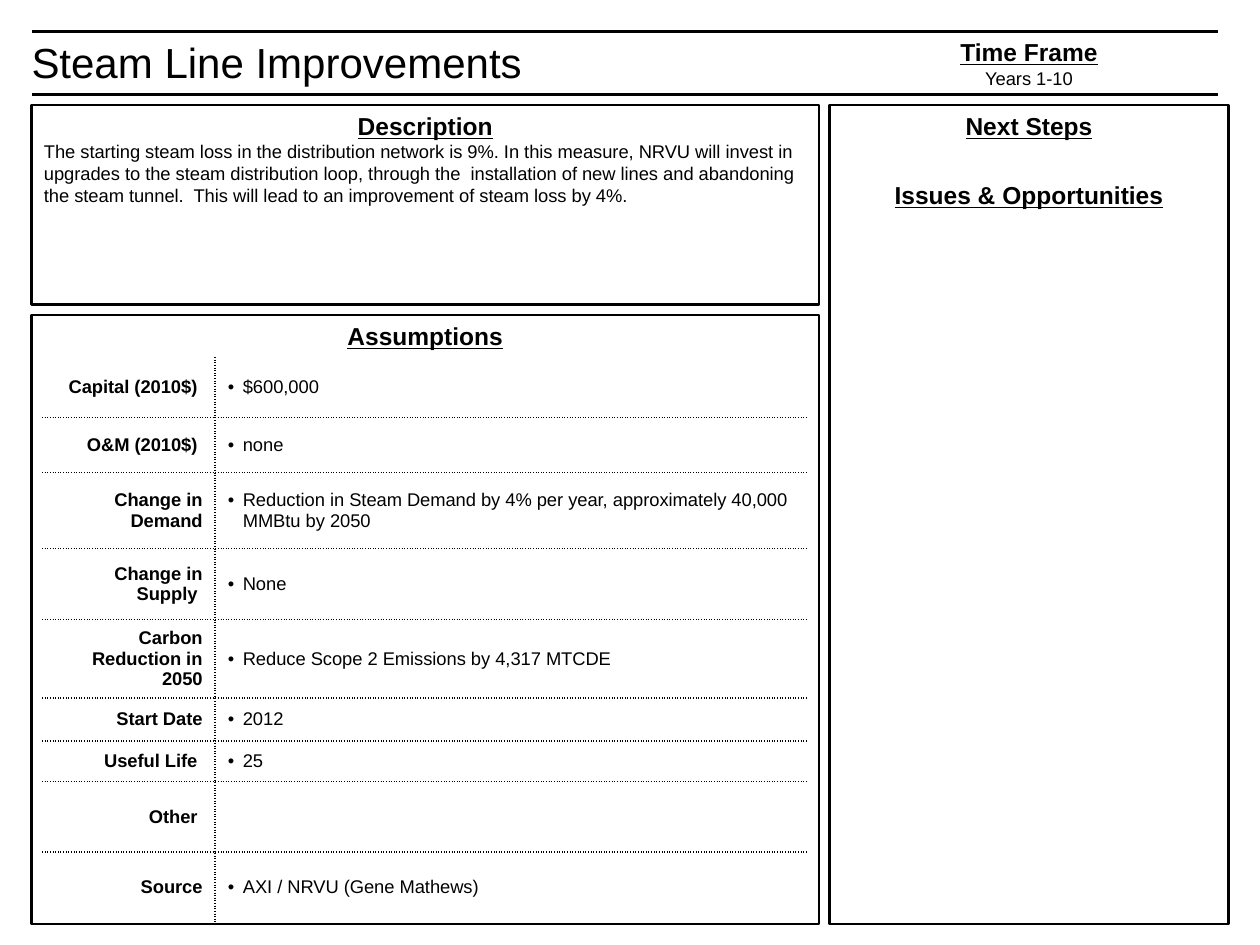
from lxml import etree
from pptx import Presentation
from pptx.dml.color import RGBColor
from pptx.enum.dml import MSO_LINE
from pptx.enum.shapes import MSO_CONNECTOR, MSO_SHAPE
from pptx.enum.text import MSO_ANCHOR, MSO_AUTO_SIZE, PP_ALIGN
from pptx.oxml.ns import qn
from pptx.util import Pt

TITLE_ONLY = 5
LEFT, CENTER, RIGHT = PP_ALIGN.LEFT, PP_ALIGN.CENTER, PP_ALIGN.RIGHT
TOP, MIDDLE = MSO_ANCHOR.TOP, MSO_ANCHOR.MIDDLE
RECTANGLE = MSO_SHAPE.RECTANGLE
STRAIGHT = MSO_CONNECTOR.STRAIGHT
NO_AUTOFIT = MSO_AUTO_SIZE.NONE
SOLID = MSO_LINE.SOLID
COLORS = {"ink": "000000"}
FONT = "Arial"
BODY_SIZE = 10.5
HEADING = {"size": 14, "bold": True, "underline": True, "align": CENTER}

DESCRIPTION = (
    "The starting steam loss in the distribution network is 9%. In this measure, "
    "NRVU will invest in upgrades to the steam distribution loop, through the  "
    "installation of new lines and abandoning the steam tunnel.  This will lead to "
    "an improvement of steam loss by 4%."
)
COLUMN_WIDTHS = (99, 339)
ASSUMPTIONS = (
    ("Capital (2010$) ", "$600,000", 34.5),
    ("O&M (2010$) ", "none", 31.5),
    ("Change in Demand", "Reduction in Steam Demand by 4% per year, "
     "approximately 40,000 MMBtu by 2050", 43.5),
    ("Change in Supply ", "None", 40.5),
    ("Carbon Reduction in 2050", "Reduce Scope 2 Emissions by 4,317 MTCDE", 45),
    ("Start Date", "2012", 24.5),
    ("Useful Life ", "25", 23),
    ("Other ", "", 40.5),
    ("Source", "AXI / NRVU (Gene Mathews)", 40.5),
)


def ink():
    return RGBColor.from_string(COLORS["ink"])


def write(paragraph, text, size=BODY_SIZE, bold=False, underline=False,
          align=LEFT, before=0, bullet=False):
    paragraph.alignment = align
    paragraph.space_before = Pt(before)
    run = paragraph.add_run()
    run.text = text
    run.font.name = FONT
    run.font.size = Pt(size)
    run.font.bold = bold
    run.font.underline = underline
    run.font.color.rgb = ink()
    if bullet:
        indent = Pt(8.6)
        properties = paragraph._p.get_or_add_pPr()
        properties.set("marL", str(indent))
        properties.set("indent", str(-indent))
        etree.SubElement(properties, qn("a:buFont")).set("typeface", FONT)
        etree.SubElement(properties, qn("a:buChar")).set("char", "•")


def write_all(frame, paragraphs):
    for index, (text, style) in enumerate(paragraphs):
        paragraph = frame.add_paragraph() if index else frame.paragraphs[0]
        write(paragraph, text, **style)


def add_title(slide, text):
    title = slide.shapes.title
    title.left, title.top, title.width, title.height = map(Pt, (10.8, 17.5, 304.5, 36))
    frame = title.text_frame
    frame.auto_size = NO_AUTOFIT
    frame.word_wrap = False
    frame.vertical_anchor = MIDDLE
    write(frame.paragraphs[0], text, size=24)


def add_rule(slide, y):
    rule = slide.shapes.add_connector(STRAIGHT, Pt(696), Pt(y), Pt(18), Pt(y))
    rule.line.color.rgb = ink()
    rule.line.width = Pt(1.25)
    etree.SubElement(rule._element.spPr, qn("a:effectLst"))


def add_panel(slide, box, paragraphs):
    panel = slide.shapes.add_shape(RECTANGLE, *map(Pt, box))
    panel.shadow.inherit = False
    panel.fill.background()
    panel.line.color.rgb = ink()
    panel.line.width = Pt(1.25)
    panel.line.dash_style = SOLID
    frame = panel.text_frame
    frame.word_wrap = True
    frame.vertical_anchor = TOP
    write_all(frame, paragraphs)


def add_time_frame(slide, box, paragraphs):
    frame = slide.shapes.add_textbox(*map(Pt, box)).text_frame
    frame.word_wrap = False
    frame.vertical_anchor = MIDDLE
    write_all(frame, paragraphs)


def set_borders(cell, dotted_sides):
    properties = cell._tc.get_or_add_tcPr()
    for position, side in enumerate("LRTB"):
        border = etree.Element(qn(f"a:ln{side}"), w=str(Pt(1)))
        if side in dotted_sides:
            fill = etree.SubElement(border, qn("a:solidFill"))
            etree.SubElement(fill, qn("a:srgbClr")).set("val", COLORS["ink"])
            etree.SubElement(border, qn("a:prstDash")).set("val", "sysDot")
        else:
            etree.SubElement(border, qn("a:noFill"))
        properties.insert(position, border)


def add_assumptions(slide, left, top):
    heights = [height for _, _, height in ASSUMPTIONS]
    table = slide.shapes.add_table(
        len(ASSUMPTIONS), len(COLUMN_WIDTHS), Pt(left), Pt(top),
        Pt(sum(COLUMN_WIDTHS)), Pt(sum(heights))).table
    table.first_row = False
    table.horz_banding = False
    for column, width in zip(table.columns, COLUMN_WIDTHS):
        column.width = Pt(width)
    last = len(ASSUMPTIONS) - 1
    for index, (label, value, height) in enumerate(ASSUMPTIONS):
        table.rows[index].height = Pt(height)
        label_cell, value_cell = table.rows[index].cells
        across = ("T" if index else "") + ("B" if index < last else "")
        for cell, inner_side in ((label_cell, "R"), (value_cell, "L")):
            cell.vertical_anchor = MIDDLE
            cell.fill.background()
            set_borders(cell, inner_side + across)
        write(label_cell.text_frame.paragraphs[0], label, bold=True, align=RIGHT)
        if value:
            write(value_cell.text_frame.paragraphs[0], value, bullet=True)


def main():
    deck = Presentation()
    deck.slide_width, deck.slide_height = Pt(720), Pt(540)
    slide = deck.slides.add_slide(deck.slide_layouts[TITLE_ONLY])

    add_title(slide, "Steam Line Improvements")
    for y in (18, 54):
        add_rule(slide, y)
    add_panel(slide, (18, 60, 450, 114),
              [("Description", HEADING), (DESCRIPTION, {})])
    add_panel(slide, (18, 180, 450, 348), [("Assumptions", HEADING)])
    add_time_frame(slide, (474, 18, 228, 36),
                   [("Time Frame", HEADING), ("Years 1-10", {"align": CENTER})])
    add_panel(slide, (474, 60, 228, 468),
              [("Next Steps", HEADING),
               ("Issues & Opportunities", {**HEADING, "before": 22.5})])
    add_assumptions(slide, 24, 204)

    deck.save("out.pptx")


if __name__ == "__main__":
    main()
